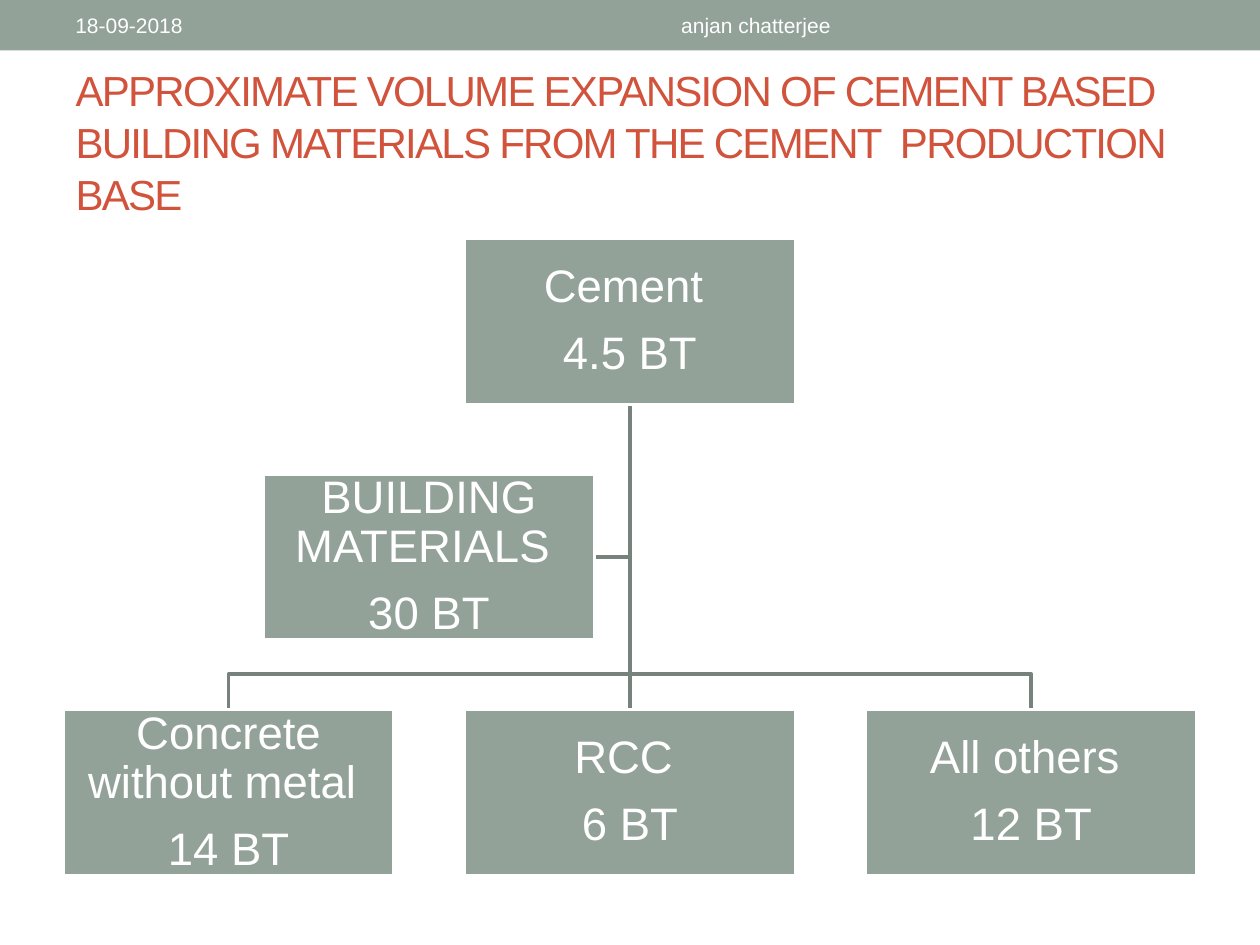
from pptx import Presentation
from pptx.dml.color import RGBColor
from pptx.enum.shapes import MSO_CONNECTOR as CONNECTOR, MSO_SHAPE as SHAPE
from pptx.enum.text import MSO_ANCHOR as ANCHOR, MSO_AUTO_SIZE as AUTO_SIZE, PP_ALIGN as ALIGN
from pptx.oxml.xmlchemy import OxmlElement
from pptx.util import Inches, Pt

SAGE = RGBColor(0x93, 0xA2, 0x99)
GREY = RGBColor(0x76, 0x82, 0x7B)
RED = RGBColor(0xD2, 0x53, 0x3C)
WHITE = RGBColor(0xFF, 0xFF, 0xFF)

# Content
TITLE = ("APPROXIMATE VOLUME EXPANSION OF CEMENT BASED BUILDING MATERIALS "
         "FROM THE CEMENT  PRODUCTION BASE")
HEADER = [  # text, left, width, alignment
    ("18-09-2018", 0.5, 3.17, ALIGN.LEFT),
    ("anjan chatterjee", 3.75, 4.5, ALIGN.CENTER),
]
ROOT = ("Cement ", "4.5 BT")
ASSISTANT = ("BUILDING MATERIALS ", "30 BT")
PRODUCTS = [
    ("Concrete without metal ", "14 BT"),
    ("RCC ", "6 BT"),
    ("All others ", "12 BT"),
]

# Layout, in inches
SLIDE_WIDTH, SLIDE_HEIGHT, MARGIN = 10, 7.5, 0.5
BOX_WIDTH, BOX_HEIGHT = 2.63, 1.32
ROOT_TOP, ASSISTANT_TOP, PRODUCT_TOP = 1.89, 3.76, 5.63
ASSISTANT_LEFT = 2.09
BUS_TOP = 5.35
CENTER = SLIDE_WIDTH / 2
STEP = (SLIDE_WIDTH - 2 * MARGIN - BOX_WIDTH) / (len(PRODUCTS) - 1)
LINE_WIDTH = Pt(2.08)


def apply(target, values):
    for name, value in values.items():
        setattr(target, name, value)


def write(shape, lines, size, color, inset=None, **paragraph_format):
    frame = shape.text_frame
    apply(frame, {"word_wrap": True, "auto_size": AUTO_SIZE.NONE,
                  "vertical_anchor": ANCHOR.MIDDLE})
    if inset is not None:
        sides = ("left", "right", "top", "bottom")
        apply(frame, {f"margin_{side}": Inches(inset) for side in sides})
    frame.text = "\n".join(lines)
    for paragraph in frame.paragraphs:
        apply(paragraph, paragraph_format)
        font = paragraph.runs[0].font
        apply(font, {"name": "Arial", "size": Pt(size)})
        font.color.rgb = color


def add_rectangle(slide, left, top, width, height):
    shape = slide.shapes.add_shape(SHAPE.RECTANGLE, *map(Inches, (left, top, width, height)))
    shape.shadow.inherit = False
    shape.fill.solid()
    shape.fill.fore_color.rgb = SAGE
    shape.line.fill.background()
    return shape


def add_box(slide, left, top, lines):
    box = add_rectangle(slide, left, top, BOX_WIDTH, BOX_HEIGHT)
    box.line.color.rgb = WHITE
    box.line.width = LINE_WIDTH
    write(box, lines, 26, WHITE, inset=0.02, alignment=ALIGN.CENTER,
          line_spacing=0.9, space_after=Pt(10.4))
    return box


def style_line(slide, shape):
    shape.line.color.rgb = GREY
    shape.line.width = LINE_WIDTH
    slide.shapes._spTree.insert(2, shape._element)  # behind the boxes


def add_branch(slide, points):
    start, *rest = [(Inches(x), Inches(y)) for x, y in points]
    builder = slide.shapes.build_freeform(*start)
    builder.add_line_segments(rest, close=False)
    branch = builder.convert_to_shape()
    branch.shadow.inherit = False
    branch.fill.background()
    style_line(slide, branch)


def main():
    presentation = Presentation()
    presentation.slide_width = Inches(SLIDE_WIDTH)
    presentation.slide_height = Inches(SLIDE_HEIGHT)
    slide = presentation.slides.add_slide(presentation.slide_layouts[5])

    # Header band
    add_rectangle(slide, 0, 0, SLIDE_WIDTH, 0.4)
    for text, left, width, alignment in HEADER:
        label = slide.shapes.add_textbox(*map(Inches, (left, 0.02, width, 0.36)))
        write(label, [text], 12, WHITE, alignment=alignment)

    # Title
    title = slide.shapes.title
    apply(title, {"left": Inches(MARGIN), "top": Inches(0.58),
                  "width": Inches(9), "height": Inches(1.08)})
    write(title, [TITLE], 24, RED, alignment=ALIGN.LEFT, line_spacing=1.03)
    title.text_frame.paragraphs[0].runs[0].font._element.set("spc", "-100")

    # Boxes
    root = add_box(slide, CENTER - BOX_WIDTH / 2, ROOT_TOP, ROOT)
    lefts = [MARGIN + i * STEP for i in range(len(PRODUCTS))]
    products = [add_box(slide, left, PRODUCT_TOP, lines)
                for left, lines in zip(lefts, PRODUCTS)]
    add_box(slide, ASSISTANT_LEFT, ASSISTANT_TOP, ASSISTANT)

    # Bent branches to the outer products and the assistant
    root_bottom = ROOT_TOP + BOX_HEIGHT
    for left in (lefts[0], lefts[-1]):
        middle = left + BOX_WIDTH / 2
        add_branch(slide, [(CENTER, root_bottom), (CENTER, BUS_TOP),
                           (middle, BUS_TOP), (middle, PRODUCT_TOP)])
    assistant_middle = ASSISTANT_TOP + BOX_HEIGHT / 2
    add_branch(slide, [(CENTER, root_bottom), (CENTER, assistant_middle),
                       (ASSISTANT_LEFT + BOX_WIDTH, assistant_middle)])

    # Straight trunk to the middle product
    trunk = slide.shapes.add_connector(CONNECTOR.STRAIGHT, 0, 0, 0, 0)
    trunk.begin_connect(root, 2)
    trunk.end_connect(products[1], 0)
    style_line(slide, trunk)
    trunk._element.spPr.append(OxmlElement("a:effectLst"))

    presentation.save("out.pptx")


if __name__ == "__main__":
    main()
